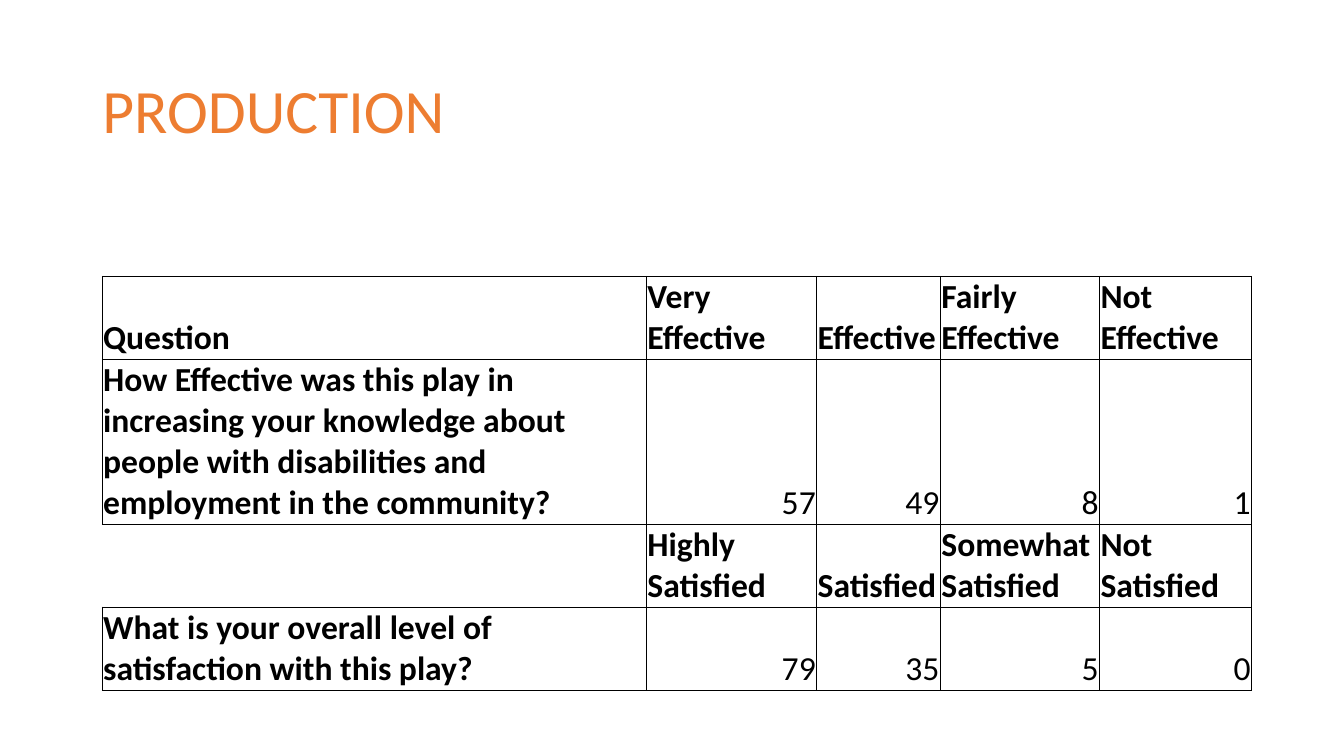
from pptx import Presentation
from pptx.util import Pt
from pptx.dml.color import RGBColor
from pptx.enum.text import MSO_ANCHOR as ANCHOR, PP_ALIGN as ALIGN
from pptx.oxml.ns import qn
from lxml.etree import SubElement


def style(font, colour, **values):
    font.color.rgb = RGBColor.from_string(colour)
    for key, value in {"name": "Calibri", **values}.items():
        setattr(font, key, value)


def border(cell, side, colour=None):
    line = SubElement(cell._tc.get_or_add_tcPr(), qn(f"a:ln{side}"), w=str(Pt(0.5)))
    if colour:
        fill = SubElement(line, qn("a:solidFill"))
        SubElement(fill, qn("a:srgbClr"), val=colour)
    else:
        SubElement(line, qn("a:noFill"))


deck = Presentation()
deck.slide_width, deck.slide_height = Pt(960), Pt(540)
slide = deck.slides.add_slide(deck.slide_layouts[5])

# Title
title = slide.shapes.title
title_box = {"left": Pt(66), "top": Pt(28.8), "width": Pt(828), "height": Pt(104.4)}
for key, value in title_box.items():
    setattr(title, key, value)
title.text_frame.text = "PRODUCTION"
title.text_frame.vertical_anchor = ANCHOR.MIDDLE
heading = title.text_frame.paragraphs[0]
heading.alignment = ALIGN.LEFT
heading.line_spacing = 0.9
style(heading.runs[0].font, "ED7D31", size=Pt(44), bold=False)

# Survey answers: label rows hold text, answer rows hold counts
survey = [
    ["Question", "Very Effective", "Effective", "Fairly Effective", "Not Effective"],
    ["How Effective was this play in increasing your knowledge about "
     "people with disabilities and employment in the community?", 57, 49, 8, 1],
    ["", "Highly Satisfied", "Satisfied", "Somewhat Satisfied", "Not Satisfied"],
    ["What is your overall level of satisfaction with this play?", 79, 35, 5, 0],
]
column_widths = [388.8, 121.6, 88.4, 113.7, 108.5]
row_heights = [58.6, 117.4, 58.6, 58.6]

answers = slide.shapes.add_table(
    len(survey), len(column_widths), Pt(73), Pt(197.2),
    Pt(sum(column_widths)), Pt(sum(row_heights))).table
answers.first_row = answers.horz_banding = False
for column, width in zip(answers.columns, column_widths):
    column.width = Pt(width)
for row, height in zip(answers.rows, row_heights):
    row.height = Pt(height)

cell_format = {
    "vertical_anchor": ANCHOR.BOTTOM,
    "margin_left": Pt(0.7), "margin_right": Pt(0.7),
    "margin_top": Pt(0.7), "margin_bottom": 0,
}
for r, entries in enumerate(survey):
    for c, entry in enumerate(entries):
        cell = answers.cell(r, c)
        for key, value in cell_format.items():
            setattr(cell, key, value)
        # The blank label cell is open on its left side
        for side in "LRTB":
            border(cell, side, None if entry == "" and side == "L" else "000000")
        cell.fill.background()
        if entry == "":
            continue
        is_count = isinstance(entry, int)
        cell.text = str(entry)
        line = cell.text_frame.paragraphs[0]
        line.alignment = ALIGN.RIGHT if is_count else ALIGN.LEFT
        style(line.runs[0].font, "000000", size=Pt(24), bold=not is_count)

deck.save("out.pptx")
